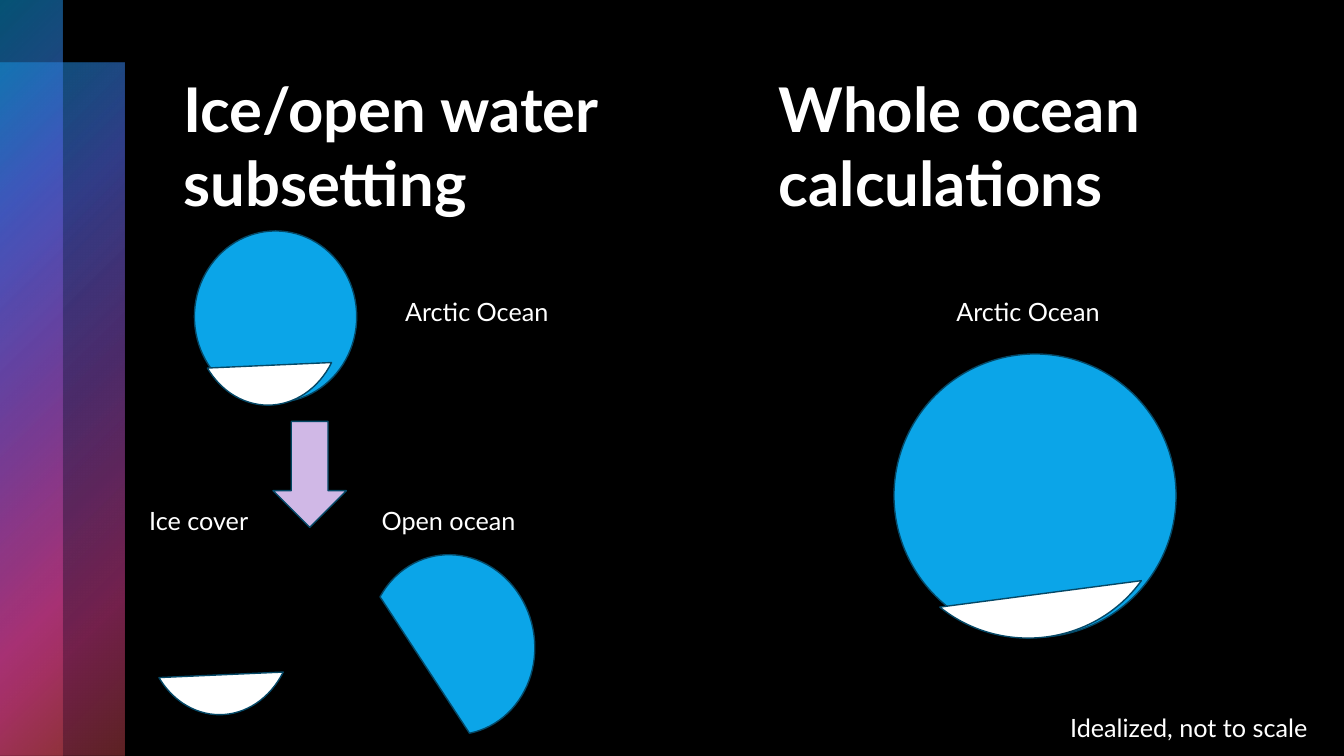
from dataclasses import dataclass

from lxml import etree
from pptx import Presentation
from pptx.dml.color import RGBColor
from pptx.enum.shapes import MSO_SHAPE as SHAPE
from pptx.enum.text import MSO_ANCHOR as ANCHOR, MSO_AUTO_SIZE as AUTO_SIZE, PP_ALIGN as ALIGN
from pptx.oxml import parse_xml
from pptx.oxml.ns import nsdecls
from pptx.util import Cm, Pt


@dataclass(frozen=True)
class Theme:
    font: str = "Lato"
    heading_size: int = 44
    label_size: int = 18
    background: str = "000000"
    text: str = "FFFFFF"
    ice: str = "FFFFFF"
    water: str = "0BA5E8"
    arrow: str = "D0B8E6"
    outline: str = "054866"
    glow: tuple = (
        (0, "0BA5E8", 50),
        (25, "5066E1", 60),
        (50, "894EC0", 55),
        (81, "E54196", 50),
        (99, "BE4449", 50),
    )


theme = Theme()


def write(box, words, size, bold=False):
    frame = box.text_frame
    frame.text = words
    paragraph = frame.paragraphs[0]
    paragraph.alignment = ALIGN.LEFT
    paragraph.line_spacing = 1.0
    font = paragraph.runs[0].font
    font.name = theme.font
    font.size = Pt(size)
    font.bold = bold
    font.color.rgb = RGBColor.from_string(theme.text)
    return frame


def draw(kind, place, color):
    figure = slide.shapes.add_shape(kind, *map(Cm, place))
    figure.shadow.inherit = False
    figure.fill.solid()
    figure.fill.fore_color.rgb = RGBColor.from_string(color)
    figure.line.color.rgb = RGBColor.from_string(theme.outline)
    figure.line.width = Pt(1)
    return figure


deck = Presentation()
deck.slide_width, deck.slide_height = Cm(33.87), Cm(19.05)
slide = deck.slides.add_slide(deck.slide_layouts[5])
slide.background.fill.solid()
slide.background.fill.fore_color.rgb = RGBColor.from_string(theme.background)

stops = "".join(
    f'<a:gs pos="{position * 1000}"><a:srgbClr val="{color}">'
    f'<a:alpha val="{opacity * 1000}"/></a:srgbClr></a:gs>'
    for position, color, opacity in theme.glow
)
for place in ((0, 1.57, 3.15, 17.48), (0, 0, 1.57, 19.05)):
    glow_bar = draw(SHAPE.RECTANGLE, place, theme.water)
    glow_bar.line.fill.background()
    properties = glow_bar.fill._xPr
    solid = properties.find("{*}solidFill")
    properties.replace(solid, parse_xml(
        f'<a:gradFill {nsdecls("a")} rotWithShape="1"><a:gsLst>{stops}</a:gsLst>'
        '<a:path path="circle"><a:fillToRect r="100000" b="100000"/></a:path></a:gradFill>'
    ))

subsetting = slide.shapes.title
subsetting.left, subsetting.top, subsetting.width, subsetting.height = map(Cm, (4.37, 1.5, 12.57, 4.32))
whole_ocean = slide.shapes.add_textbox(*map(Cm, (19.38, 1.5, 12.57, 4.32)))
for heading, words in (
    (subsetting, "Ice/open water subsetting"),
    (whole_ocean, "Whole ocean calculations"),
):
    frame = write(heading, words, theme.heading_size, True)
    frame.word_wrap = True
    frame.auto_size = AUTO_SIZE.NONE
    frame.vertical_anchor = ANCHOR.MIDDLE

draw(SHAPE.OVAL, (4.9, 5.82, 4.09, 4.32), theme.water)
draw(SHAPE.OVAL, (22.53, 8.92, 7.11, 7.14), theme.water)

degree = 0.6
for place, start, end, turn, color in (
    ((4.9, 5.89, 3.71, 4.32), 34.11, 141.26, 0, theme.ice),
    ((3.68, 13.69, 3.71, 4.32), 34.11, 141.26, 0, theme.ice),
    ((9.3, 13.97, 4.17, 4.55), 45, 270, 168.7, theme.water),
    ((22.43, 9.32, 6.96, 6.76), 34.11, 130.56, 0, theme.ice),
):
    part = draw(SHAPE.CHORD, place, color)
    part.adjustments[0] = start * degree
    part.adjustments[1] = end * degree
    part.rotation = turn

draw(SHAPE.DOWN_ARROW, (6.88, 10.62, 1.85, 2.67), theme.arrow)

for words, left, top, width in (
    ("Arctic Ocean", 9.96, 7.34, 4.45),
    ("Ice cover", 3.51, 12.6, 3.23),
    ("Open ocean", 9.37, 12.6, 4.17),
    ("Arctic Ocean", 23.85, 7.34, 4.45),
    ("Idealized, not to scale", 26.72, 17.83, 6.96),
):
    label = slide.shapes.add_textbox(Cm(left), Cm(top), Cm(width), Cm(1.02))
    frame = write(label, words, theme.label_size)
    frame.word_wrap = False
    frame.auto_size = AUTO_SIZE.SHAPE_TO_FIT_TEXT

deck.save("out.pptx")
